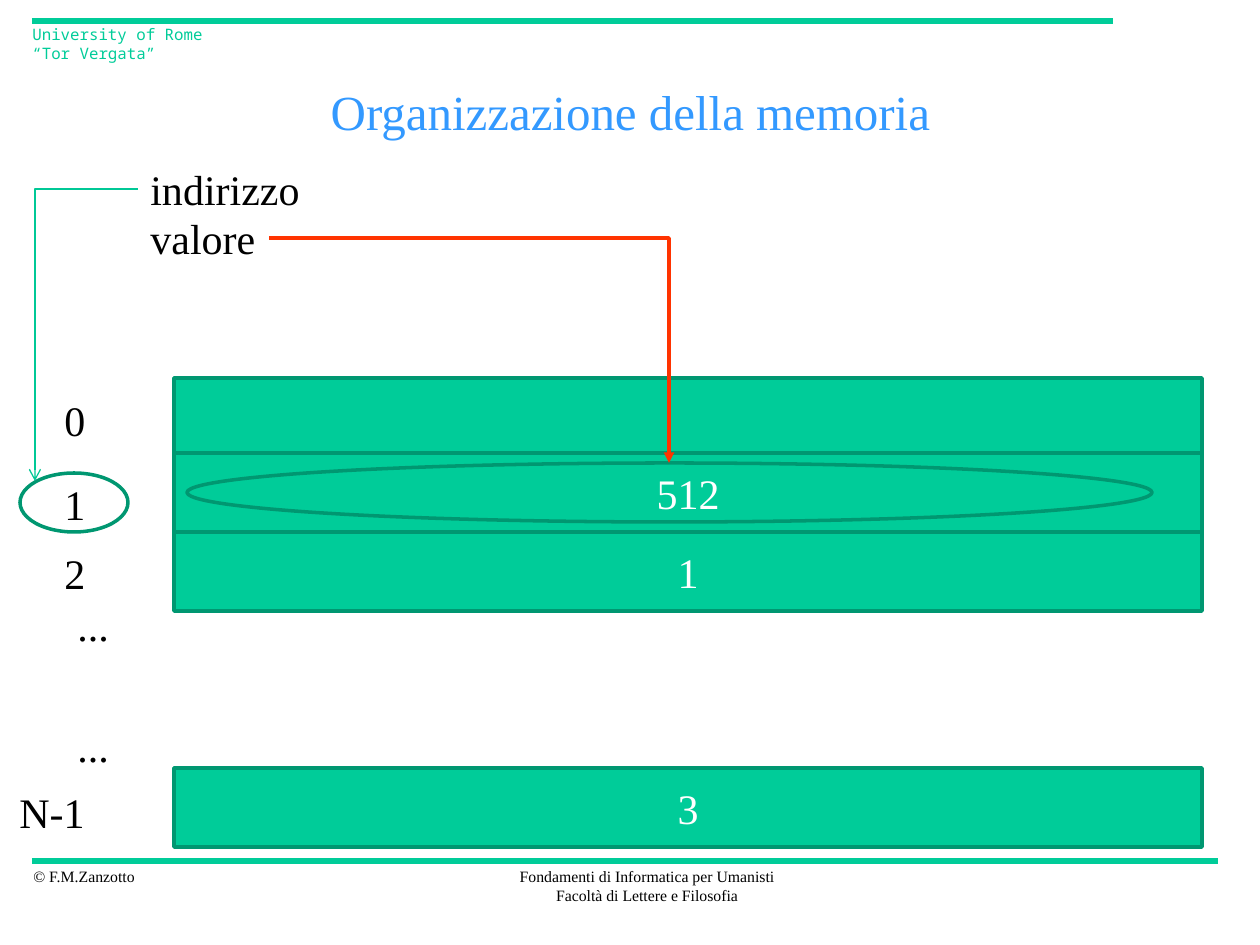
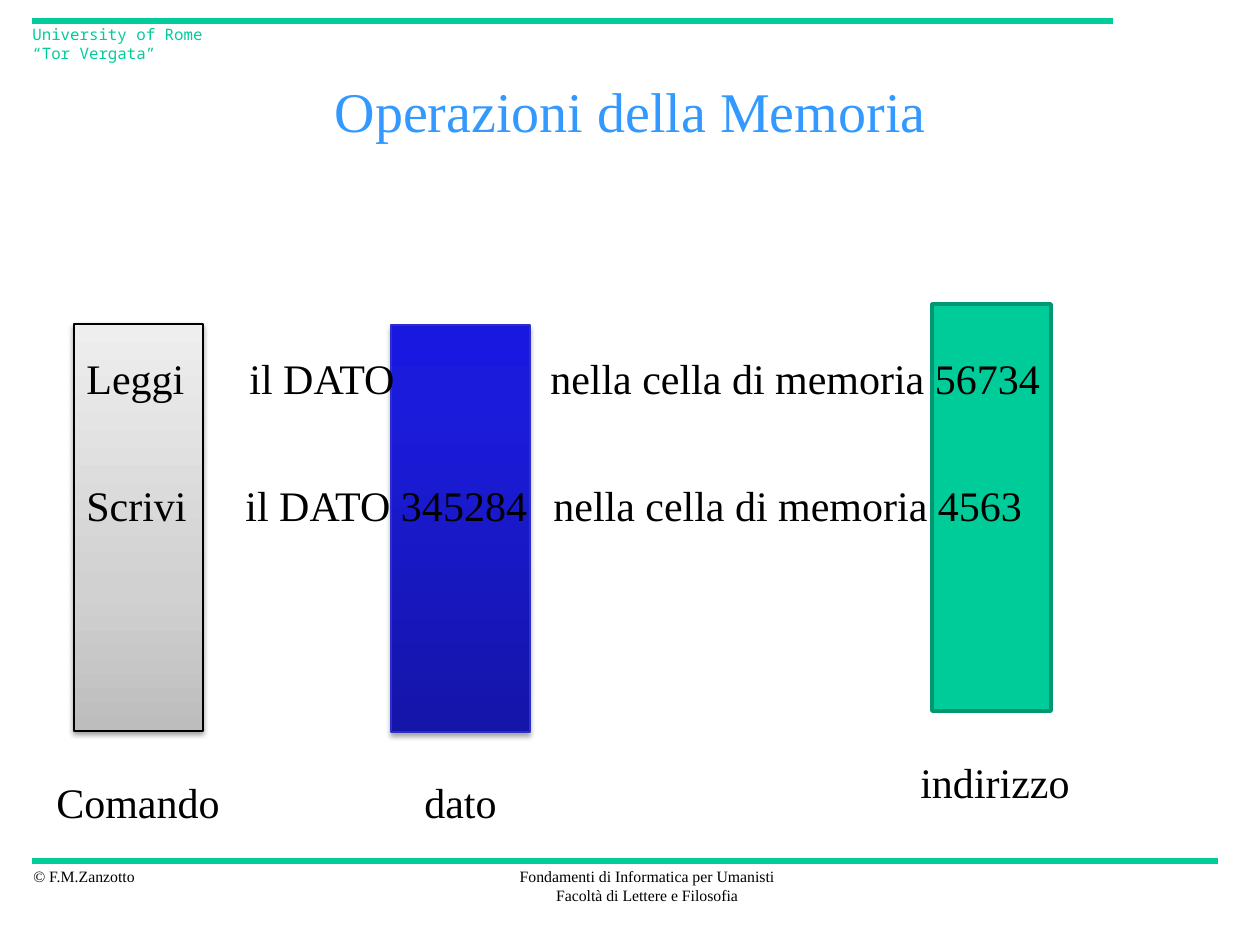
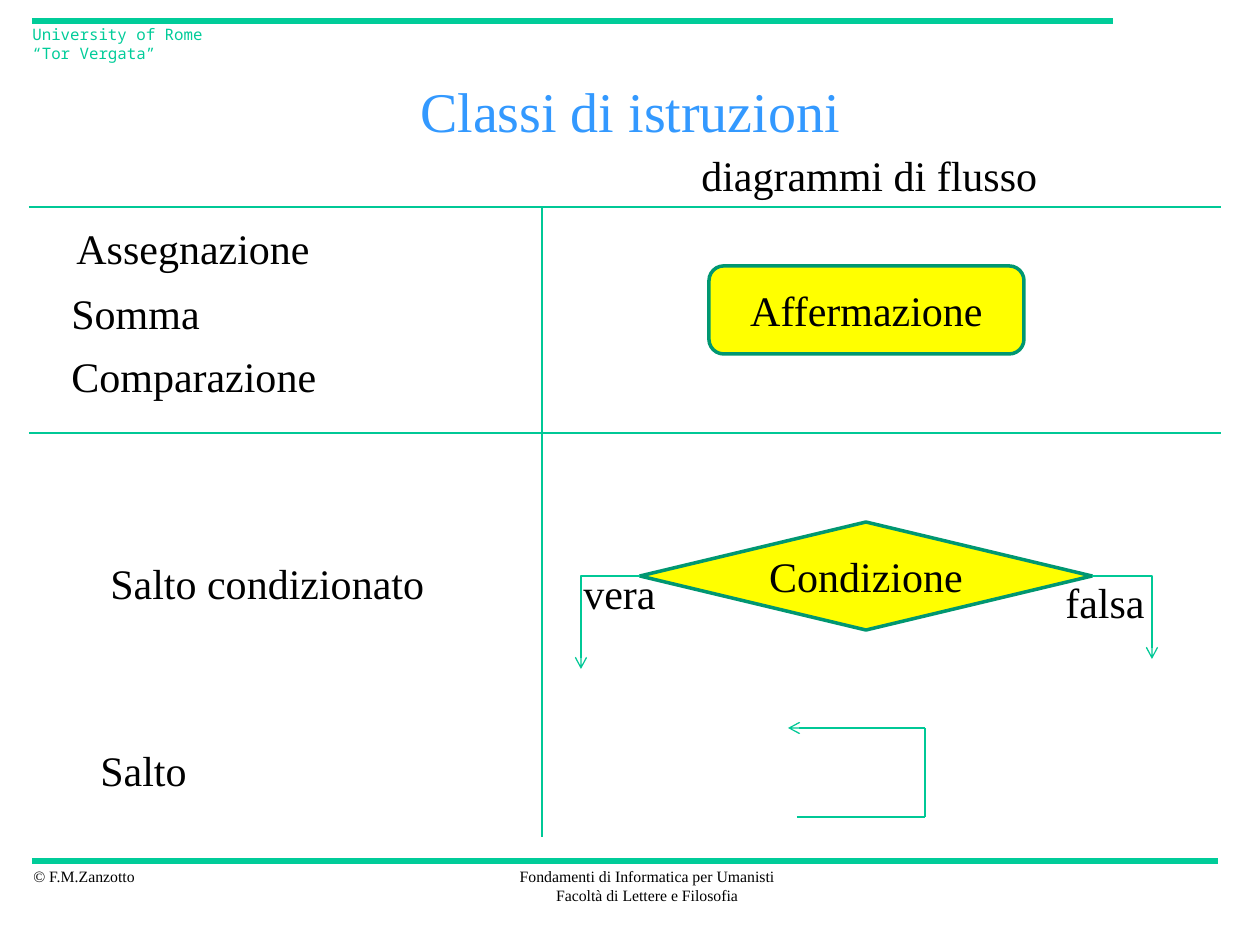
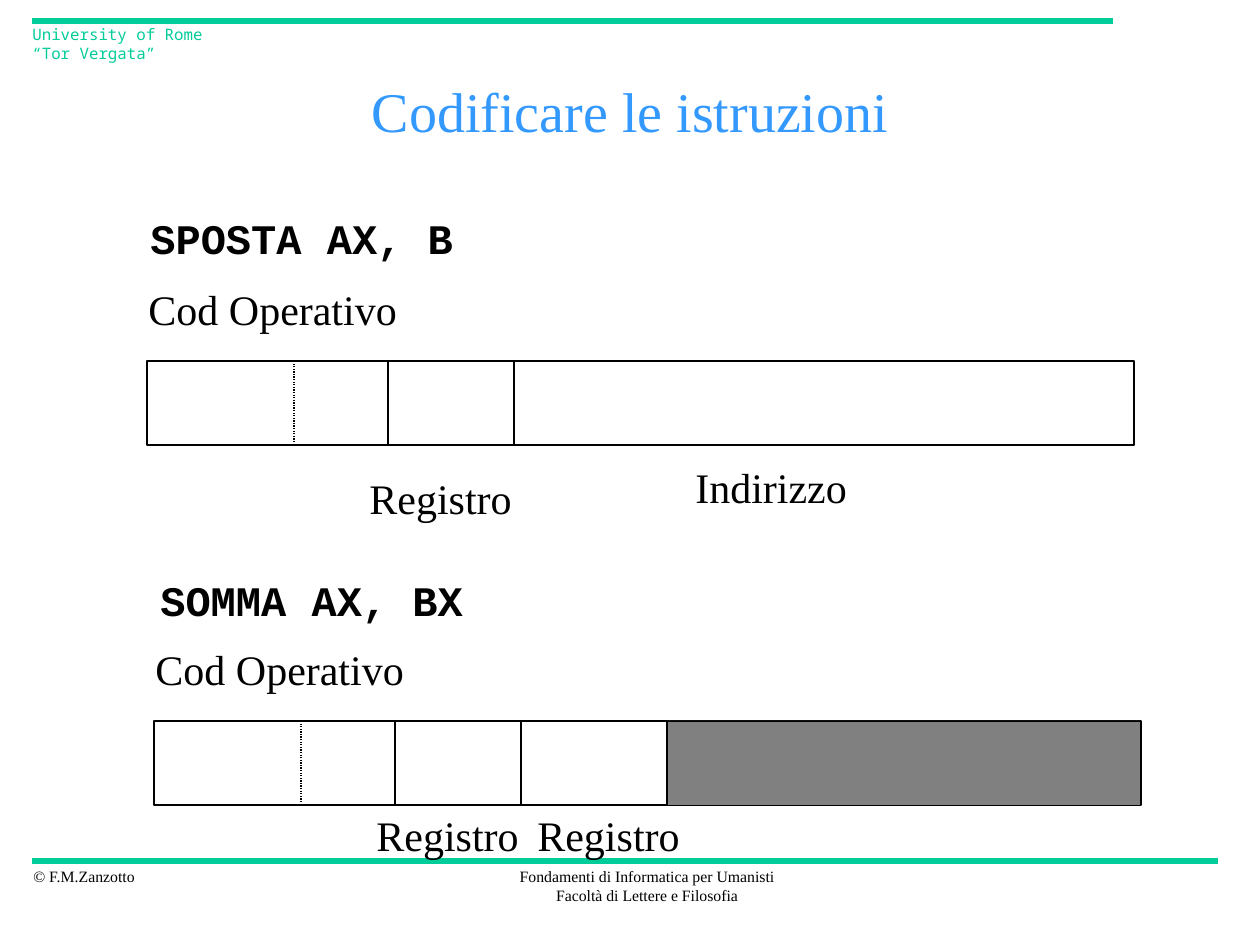
from lxml.etree import SubElement
from pptx import Presentation
from pptx.dml.color import RGBColor
from pptx.enum.dml import MSO_LINE
from pptx.enum.shapes import MSO_CONNECTOR as CONNECTOR, MSO_SHAPE as SHAPE
from pptx.enum.text import MSO_ANCHOR as ANCHOR, MSO_AUTO_SIZE as AUTO_SIZE, PP_ALIGN as ALIGN
from pptx.oxml.ns import qn
from pptx.util import Emu, Pt

EMU_PER_PX = 914400 / 126
SLIDE_WIDTH, SLIDE_HEIGHT = 1260, 945
LABEL_HEIGHT = 63
TITLE_ONLY = 5

GREEN = RGBColor(0x00, 0xCC, 0x99)
DARK_GREEN = RGBColor(0x00, 0x97, 0x71)
LINE_GREEN = RGBColor(0x00, 0xC8, 0x96)
TITLE_BLUE = RGBColor(0x33, 0x99, 0xFF)
DATA_BORDER = RGBColor(0x2E, 0x2E, 0xCB)
RED = RGBColor(0xFF, 0x33, 0x00)
YELLOW = RGBColor(0xFF, 0xFF, 0x00)
GRAY = RGBColor(0x80, 0x80, 0x80)
BLACK = RGBColor(0x00, 0x00, 0x00)
WHITE = RGBColor(0xFF, 0xFF, 0xFF)
BLUE_STOPS = [
    (0, RGBColor(0x15, 0x15, 0xA9)),
    (80, RGBColor(0x1B, 0x1B, 0xDC)),
    (100, RGBColor(0x18, 0x18, 0xE1)),
]
GRAY_STOPS = [
    (0, RGBColor(0xBD, 0xBD, 0xBD)),
    (35, RGBColor(0xD1, 0xD1, 0xD1)),
    (100, RGBColor(0xEE, 0xEE, 0xEE)),
]

SERIF = "Times New Roman"
MONO = "Noto Sans Mono"
CODE = "Courier New"


def px(length):
    return Emu(round(length * EMU_PER_PX))


def write_text(frame, text, size=24, color=BLACK, font=SERIF, bold=False, align=ALIGN.LEFT):
    for index, line in enumerate(text.split("\n")):
        paragraph = frame.add_paragraph() if index else frame.paragraphs[0]
        paragraph.text = line
        paragraph.alignment = align
        for run in paragraph.runs:
            run.font.size = Pt(size)
            run.font.name = font
            run.font.bold = bold
            run.font.color.rgb = color


def add_label(slide, text, left, top, width, height=LABEL_HEIGHT, wrap=False, **text_format):
    box = slide.shapes.add_textbox(px(left), px(top), px(width), px(height))
    box.text_frame.word_wrap = wrap
    box.text_frame.auto_size = AUTO_SIZE.SHAPE_TO_FIT_TEXT
    write_text(box.text_frame, text, **text_format)


def add_box(slide, left, top, width, height, kind=SHAPE.RECTANGLE, fill=None,
            line=DARK_GREEN, weight=2, text="", color=BLACK):
    shape = slide.shapes.add_shape(kind, px(left), px(top), px(width), px(height))
    shape.shadow.inherit = False
    if fill is None:
        shape.fill.background()
    else:
        shape.fill.solid()
        shape.fill.fore_color.rgb = fill
    shape.line.color.rgb = line
    shape.line.width = Pt(weight)
    if text:
        shape.text_frame.vertical_anchor = ANCHOR.MIDDLE
        write_text(shape.text_frame, text, color=color, align=ALIGN.CENTER)
    return shape


def add_color(parent, color):
    return SubElement(parent, qn("a:srgbClr"), val=str(color))


def apply_gradient(shape, stops):
    shape.fill.gradient()
    shape.fill.gradient_angle = 90
    stop_list = shape.element.spPr.find(".//" + qn("a:gsLst"))
    stop_list.clear()
    for position, color in stops:
        add_color(SubElement(stop_list, qn("a:gs"), pos=str(position * 1000)), color)


def apply_shadow(shape, distance, opacity):
    effects = shape.element.spPr.find(qn("a:effectLst"))
    shadow = SubElement(effects, qn("a:outerShdw"), blurRad=str(Pt(3.1)), dist=str(Pt(distance)),
                        dir="5400000", rotWithShape="0")
    SubElement(add_color(shadow, BLACK), qn("a:alpha"), val=str(opacity * 1000))


def add_line(slide, start, end, color=LINE_GREEN, weight=0.75, arrow=None, dash=None, bent=False):
    kind = CONNECTOR.ELBOW if bent else CONNECTOR.STRAIGHT
    connector = slide.shapes.add_connector(kind, *map(px, (*start, *end)))
    connector.line.color.rgb = color
    connector.line.width = Pt(weight)
    if dash:
        connector.line.dash_style = dash
    properties = connector.element.spPr
    if bent:
        properties.find(qn("a:prstGeom")).set("prst", "bentConnector2")
    if arrow:
        SubElement(properties.find(qn("a:ln")), qn("a:tailEnd"), type=arrow)
    SubElement(properties, qn("a:effectLst"))


def add_slide(presentation, title, title_size=32):
    slide = presentation.slides.add_slide(presentation.slide_layouts[TITLE_ONLY])
    add_line(slide, (32, 861), (1218, 861), color=GREEN, weight=3)
    add_line(slide, (32, 21), (1113, 21), color=GREEN, weight=3)
    add_label(slide, "© F.M.Zanzotto", 21, 861, 129, 32, size=9)
    add_label(slide, "Fondamenti di Informatica per Umanisti\nFacoltà di Lettere e Filosofia",
              506, 861, 282, 50, size=9, align=ALIGN.CENTER)
    add_label(slide, "University of Rome\v“Tor Vergata”", 20, 19, 215, 32,
              size=9, color=GREEN, font=MONO)
    placeholder = slide.shapes.title
    placeholder.left, placeholder.top = px(95), px(63)
    placeholder.width, placeholder.height = px(1071), px(95)
    placeholder.text_frame.vertical_anchor = ANCHOR.MIDDLE
    write_text(placeholder.text_frame, title, size=title_size, color=TITLE_BLUE, align=ALIGN.CENTER)
    return slide


def build_memory_layout(presentation):
    slide = add_slide(presentation, "Organizzazione della memoria", title_size=28)
    for text, left, top, width in [
        ("0", 52, 388, 47), ("1", 52, 472, 47), ("2", 52, 541, 47), ("N-1", 7, 780, 92),
        ("...", 65, 593, 57), ("...", 65, 714, 57),
        ("valore", 138, 206, 131), ("indirizzo", 138, 157, 176),
    ]:
        add_label(slide, text, left, top, width)
    for top, value in [(378, ""), (453, "512"), (532, "1"), (768, "3")]:
        add_box(slide, 174, top, 1028, 79, fill=GREEN, text=value, color=WHITE)
    for left, top, width in [(187, 463, 965), (20, 473, 108)]:
        add_box(slide, left, top, width, 59, kind=SHAPE.OVAL)
    add_line(slide, (138, 189), (35, 481), arrow="arrow", bent=True)
    add_line(slide, (269, 238), (669, 463), color=RED, weight=2, arrow="triangle", bent=True)


def build_memory_operations(presentation):
    slide = add_slide(presentation, "Operazioni della Memoria")
    data_column = add_box(slide, 391, 325, 139, 407, line=DATA_BORDER, weight=0.75)
    apply_gradient(data_column, BLUE_STOPS)
    apply_shadow(data_column, 1.8, 35)
    command_column = add_box(slide, 74, 324, 129, 407, line=BLACK, weight=0.75)
    apply_gradient(command_column, GRAY_STOPS)
    apply_shadow(command_column, 1.6, 38)
    add_box(slide, 932, 304, 119, 407, fill=GREEN)
    for text, left, top, width in [
        ("Leggi", 74, 346, 135), ("il DATO", 237, 346, 185),
        ("nella cella di memoria 56734", 538, 346, 519),
        ("Scrivi", 74, 473, 126), ("il DATO 345284", 233, 473, 310),
        ("nella cella di memoria 4563", 541, 473, 498),
        ("Comando", 44, 770, 190), ("dato", 412, 770, 98), ("indirizzo", 908, 750, 176),
    ]:
        add_label(slide, text, left, top, width)


def build_instruction_classes(presentation):
    slide = add_slide(presentation, "Classi di istruzioni")
    add_box(slide, 709, 266, 315, 88, kind=SHAPE.ROUNDED_RECTANGLE, fill=YELLOW, text="Affermazione")
    add_box(slide, 640, 522, 452, 108, kind=SHAPE.DIAMOND, fill=YELLOW, text="Condizione")
    add_line(slide, (640, 576), (581, 669), arrow="arrow", bent=True)
    add_line(slide, (1092, 576), (1152, 659), arrow="arrow", bent=True)
    add_line(slide, (925, 728), (788, 728), arrow="arrow")
    add_line(slide, (925, 728), (925, 817))
    add_line(slide, (797, 817), (925, 817))
    for top in (433, 207):
        add_line(slide, (29, top), (1221, top))
    add_line(slide, (542, 207), (542, 837))
    for text, left, top, width in [
        ("vera", 571, 561, 98), ("falsa", 1053, 570, 106), ("diagrammi di flusso", 689, 143, 364),
        ("Assegnazione", 64, 216, 261), ("Somma", 59, 281, 155), ("Comparazione", 59, 344, 272),
        ("Salto condizionato", 98, 551, 341), ("Salto", 88, 738, 112),
    ]:
        add_label(slide, text, left, top, width)


def add_instruction(slide, left, top, register_gap):
    bottom = top + 84
    add_box(slide, left, top, 987, 84, fill=WHITE, line=BLACK, weight=0.75)
    for offset, weight, dash in [(147, 0.75, MSO_LINE.ROUND_DOT), (241, 1.5, None), (367, 1.5, None)]:
        add_line(slide, (left + offset, top), (left + offset, bottom),
                 color=BLACK, weight=weight, dash=dash)
    add_label(slide, "Cod Operativo", left - 11, top - 84, 282)
    add_label(slide, "Registro", left + 210, bottom + register_gap, 172, wrap=True)


def build_instruction_codes(presentation):
    slide = add_slide(presentation, "Codificare le istruzioni")
    add_instruction(slide, 147, 361, 21)
    add_label(slide, "Indirizzo", 683, 455, 186)
    add_instruction(slide, 154, 721, -2)
    add_label(slide, "Registro", 525, 803, 172)
    add_label(slide, "SPOSTA AX, B", 138, 206, 330, font=CODE, bold=True)
    add_label(slide, "SOMMA AX, BX", 148, 568, 330, font=CODE, bold=True)
    add_line(slide, (667, 721), (667, 805), color=BLACK, weight=1.5)
    add_box(slide, 667, 721, 473, 84, fill=GRAY, line=BLACK, weight=0.25)


def main():
    presentation = Presentation()
    presentation.slide_width = px(SLIDE_WIDTH)
    presentation.slide_height = px(SLIDE_HEIGHT)
    build_memory_layout(presentation)
    build_memory_operations(presentation)
    build_instruction_classes(presentation)
    build_instruction_codes(presentation)
    presentation.save("out.pptx")


if __name__ == "__main__":
    main()
